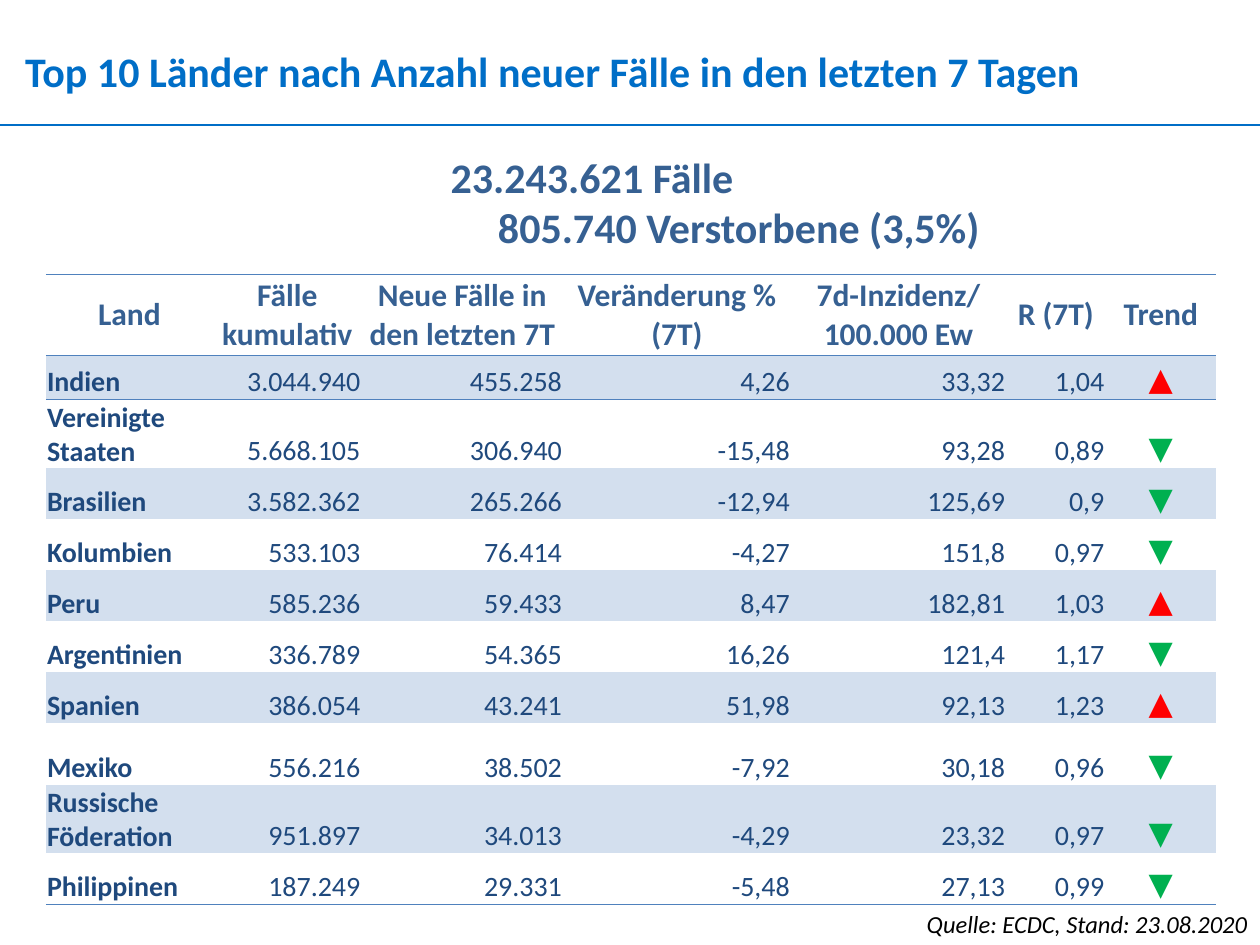
from lxml import etree
from pptx import Presentation
from pptx import util as u
from pptx.dml.color import RGBColor
from pptx.enum import shapes, text
from pptx.oxml import ns

Pt = u.Pt
FONT = "Calibri"
BLUE = RGBColor(0x00, 0x6E, 0xC7)
STEEL = RGBColor(0x36, 0x60, 0x92)
NAVY = RGBColor(0x1F, 0x49, 0x7D)
BORDER = RGBColor(0x4F, 0x81, 0xBD)
BAND = RGBColor(0xD3, 0xDF, 0xEE)
RED = RGBColor(0xFF, 0x00, 0x00)
GREEN = RGBColor(0x00, 0xB0, 0x50)
BLACK = RGBColor(0x00, 0x00, 0x00)
TREND_COLORS = {"▲": RED, "▼": GREEN}
PLAIN_TABLE_STYLE = "{2D5ABB26-0587-4C30-8999-92F81FD0307C}"

HEADER = ["Land", "Fälle kumulativ", "Neue Fälle in den letzten 7T", "Veränderung % (7T)",
          "7d-Inzidenz/ 100.000 Ew", "R (7T)", "Trend"]
COUNTRIES = [
    ["Indien", "3.044.940", "455.258", "4,26", "33,32", "1,04", "▲"],
    ["Vereinigte Staaten", "5.668.105", "306.940", "-15,48", "93,28", "0,89", "▼"],
    ["Brasilien", "3.582.362", "265.266", "-12,94", "125,69", "0,9", "▼"],
    ["Kolumbien", "533.103", "76.414", "-4,27", "151,8", "0,97", "▼"],
    ["Peru", "585.236", "59.433", "8,47", "182,81", "1,03", "▲"],
    ["Argentinien", "336.789", "54.365", "16,26", "121,4", "1,17", "▼"],
    ["Spanien", "386.054", "43.241", "51,98", "92,13", "1,23", "▲"],
    ["Mexiko", "556.216", "38.502", "-7,92", "30,18", "0,96", "▼"],
    ["Russische Föderation", "951.897", "34.013", "-4,29", "23,32", "0,97", "▼"],
    ["Philippinen", "187.249", "29.331", "-5,48", "27,13", "0,99", "▼"],
]
COLUMN_WIDTHS = [95.6, 84.8, 115.2, 130.2, 123, 56.8, 63.2]
ROW_HEIGHTS = [46.4, 25, 38.9] + [29.2] * 5 + [35.3, 38.9, 29.2]


def format_text(text_frame, size, color, bold=False, italic=False, align=text.PP_ALIGN.LEFT):
    """Give every paragraph and run of a text frame the same look."""
    for paragraph in text_frame.paragraphs:
        paragraph.alignment = align
        for run in paragraph.runs:
            font = run.font
            font.name, font.size, font.bold, font.italic = FONT, Pt(size), bold, italic
            font.color.rgb = color


def set_margins(target, left, top, right, bottom):
    """Set the inner margins of a text frame or table cell."""
    target.margin_left, target.margin_top = Pt(left), Pt(top)
    target.margin_right, target.margin_bottom = Pt(right), Pt(bottom)


def add_title(slide, content):
    """Fill and place the title placeholder."""
    title = slide.shapes.title
    title.left, title.top, title.width, title.height = Pt(14.4), Pt(26), Pt(693), Pt(29)
    text_frame = title.text_frame
    text_frame.text = content
    text_frame.auto_size = text.MSO_AUTO_SIZE.NONE
    text_frame.vertical_anchor = text.MSO_ANCHOR.TOP
    set_margins(text_frame, 0, 0, 0, 0)
    format_text(text_frame, 24, BLUE, bold=True)


def add_rule(slide, top):
    """Draw the line under the title across the slide."""
    connector = slide.shapes.add_connector(
        shapes.MSO_CONNECTOR.STRAIGHT, Pt(0), Pt(top), Pt(720), Pt(top))
    connector.line.color.rgb = BLUE
    connector.line.width = Pt(1.5)
    properties = connector.element.find(ns.qn("p:spPr"))
    etree.SubElement(properties, ns.qn("a:effectLst"))


def add_text(slide, content, left, top, width, height):
    """Add a wrapping text box and return its text frame."""
    text_frame = slide.shapes.add_textbox(Pt(left), Pt(top), Pt(width), Pt(height)).text_frame
    text_frame.word_wrap = True
    text_frame.text = content
    return text_frame


def add_totals(slide):
    """Add the worldwide totals with an indented second line."""
    text_frame = add_text(slide, "23.243.621 Fälle\n805.740 Verstorbene (3,5%)", 250.5, 83, 330, 65.4)
    format_text(text_frame, 24, STEEL, bold=True)
    properties = text_frame.paragraphs[1]._p.get_or_add_pPr()
    properties.set("marL", str(Pt(27)))


def add_border(cell, side):
    """Draw a thin border on one side of a cell."""
    line = etree.SubElement(cell._tc.get_or_add_tcPr(), ns.qn(f"a:ln{side}"), w=str(Pt(1)))
    fill = etree.SubElement(line, ns.qn("a:solidFill"))
    etree.SubElement(fill, ns.qn("a:srgbClr"), val=str(BORDER))


def format_header_cell(cell):
    """Format a column heading."""
    cell.vertical_anchor = text.MSO_ANCHOR.MIDDLE
    set_margins(cell, 4.3, 0, 4.3, 0)
    format_text(cell.text_frame, 18, STEEL, bold=True, align=text.PP_ALIGN.CENTER)


def format_body_cell(cell, column):
    """Format a country name, a figure or a trend arrow."""
    cell.vertical_anchor = text.MSO_ANCHOR.BOTTOM
    set_margins(cell, 0.7, 0.7, 0.7, 0)
    if column == 0:
        format_text(cell.text_frame, 16, NAVY, bold=True)
    elif cell.text in TREND_COLORS:
        format_text(cell.text_frame, 18, TREND_COLORS[cell.text], align=text.PP_ALIGN.CENTER)
    else:
        format_text(cell.text_frame, 16, NAVY, align=text.PP_ALIGN.RIGHT)


def add_country_table(slide):
    """Add the banded table of the ten countries."""
    rows = [HEADER] + COUNTRIES
    frame = slide.shapes.add_table(len(rows), len(HEADER), Pt(26.2), Pt(156.8),
                                   Pt(sum(COLUMN_WIDTHS)), Pt(sum(ROW_HEIGHTS)))
    table = frame.table
    table.first_row = table.horz_banding = False
    next(frame.element.iter(ns.qn("a:tableStyleId"))).text = PLAIN_TABLE_STYLE
    for column, width in zip(table.columns, COLUMN_WIDTHS):
        column.width = Pt(width)
    for row, height in zip(table.rows, ROW_HEIGHTS):
        row.height = Pt(height)
    for row_index, values in enumerate(rows):
        for column_index, value in enumerate(values):
            cell = table.cell(row_index, column_index)
            cell.text_frame.text = value
            if row_index == 0:
                format_header_cell(cell)
            else:
                format_body_cell(cell, column_index)
            if row_index <= 1:
                add_border(cell, "T")
            if row_index in (0, len(rows) - 1):
                add_border(cell, "B")
            if row_index % 2:
                cell.fill.solid()
                cell.fill.fore_color.rgb = BAND
            else:
                cell.fill.background()


def main():
    """Build and save the slide."""
    presentation = Presentation()
    presentation.slide_width, presentation.slide_height = Pt(720), Pt(540)
    slide = presentation.slides.add_slide(presentation.slide_layouts[5])
    add_title(slide, "Top 10 Länder nach Anzahl neuer Fälle in den letzten 7 Tagen")
    add_rule(slide, 71.5)
    add_totals(slide)
    source = add_text(slide, "Quelle: ECDC, Stand: 23.08.2020", 465, 515.8, 255, 24.2)
    format_text(source, 14, BLACK, italic=True, align=text.PP_ALIGN.RIGHT)
    add_country_table(slide)
    presentation.save("out.pptx")


if __name__ == "__main__":
    main()
